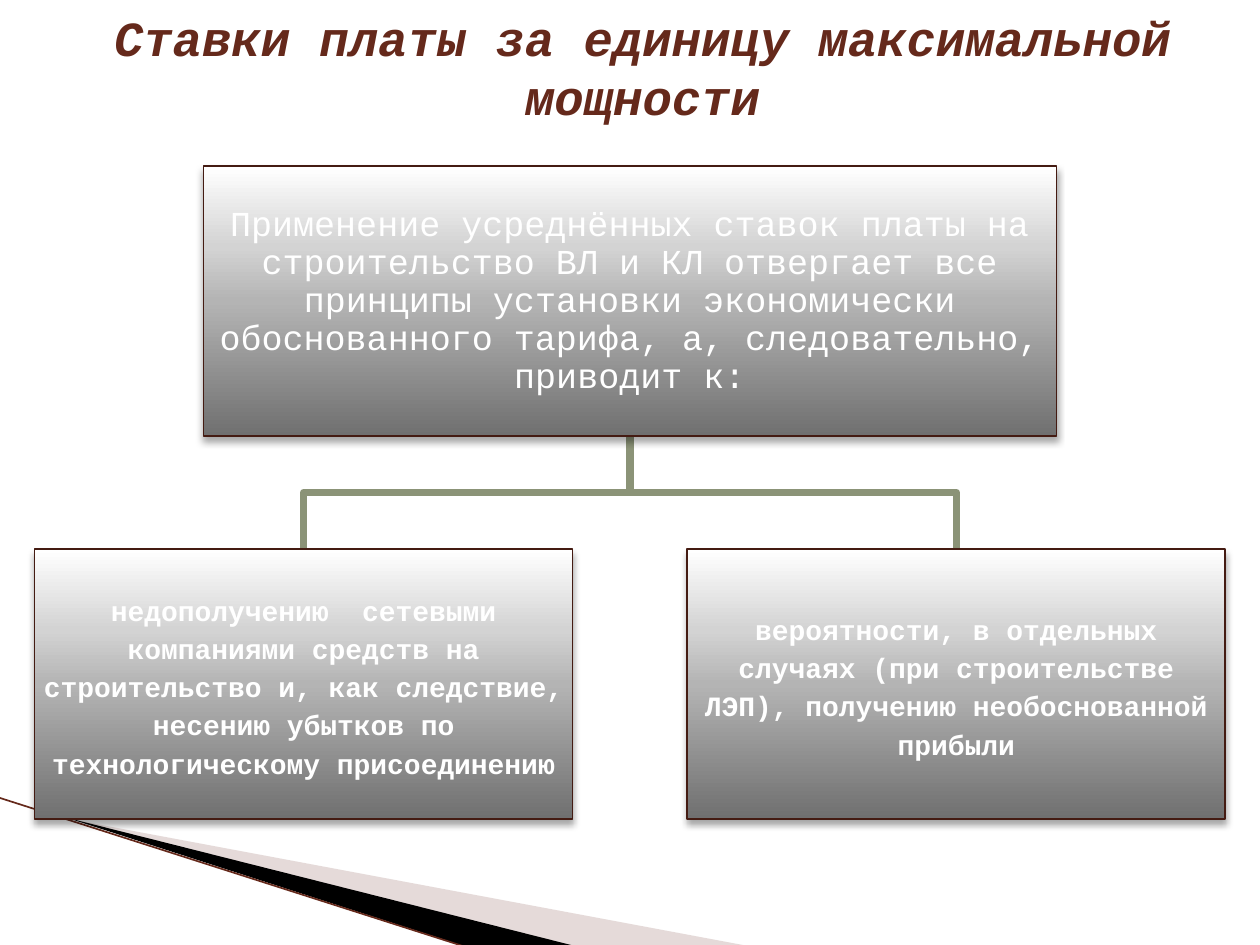
import pptx
import pptx.dml.color
import pptx.enum.shapes
import pptx.enum.text
import pptx.oxml
import pptx.oxml.ns
import pptx.util
from dataclasses import dataclass

Inches = pptx.util.Inches
Pt = pptx.util.Pt
NAMESPACE = pptx.oxml.ns.nsdecls("a")


@dataclass(frozen=True)
class Theme:
    font: str = "Courier New"
    title_size: int = 28
    main_size: int = 20
    result_size: int = 16
    title_color: str = "65291B"
    text_color: str = "FFFFFF"
    box_line: str = "441B12"
    link_color: str = "8B9377"
    link_width: float = 4.33
    wedge_light: str = "BFA4A1"
    wedge_dark: str = "000000"
    gradient: tuple = ((0, "707070"), (50, "B4B4B4"), (70, "D3D3D3"), (100, "FFFFFF"))


def rgb(color):
    return pptx.dml.color.RGBColor.from_string(color)


class SlideBuilder:
    def __init__(self, slide, theme):
        self.slide = slide
        self.theme = theme

    def add_text(self, paragraph, text, size, color, bold=False, italic=False):
        paragraph.alignment = pptx.enum.text.PP_ALIGN.CENTER
        run = paragraph.add_run()
        run.text = text
        run.font.name = self.theme.font
        run.font.size = Pt(size)
        run.font.bold = bold
        run.font.italic = italic
        run.font.color.rgb = rgb(color)

    def title(self, text, left, top, width, height):
        shape = self.slide.shapes.add_textbox(
            Inches(left), Inches(top), Inches(width), Inches(height))
        shape.text_frame.word_wrap = True
        paragraph = shape.text_frame.paragraphs[0]
        paragraph._p.get_or_add_pPr().set("marL", str(Inches(0.2)))
        self.add_text(paragraph, text, self.theme.title_size,
                      self.theme.title_color, bold=True, italic=True)

    def freeform(self, points, close):
        builder = self.slide.shapes.build_freeform(
            *(Inches(value) for value in points[0]))
        builder.add_line_segments(
            [(Inches(x), Inches(y)) for x, y in points[1:]], close=close)
        shape = builder.convert_to_shape()
        shape.shadow.inherit = False
        return shape

    def wedge(self, points, color, opacity=100):
        shape = self.freeform(points, close=True)
        shape.fill.solid()
        shape.fill.fore_color.rgb = rgb(color)
        shape.line.fill.background()
        if opacity < 100:
            color_element = shape._element.spPr.find(
                pptx.oxml.ns.qn("a:solidFill"))[0]
            color_element.append(pptx.oxml.parse_xml(
                f'<a:alpha {NAMESPACE} val="{opacity * 1000}"/>'))

    def link(self, points):
        shape = self.freeform(points, close=False)
        shape.fill.background()
        shape.line.color.rgb = rgb(self.theme.link_color)
        shape.line.width = Pt(self.theme.link_width)
        shape._element.spPr.find(pptx.oxml.ns.qn("a:ln")).append(
            pptx.oxml.parse_xml(f"<a:round {NAMESPACE}/>"))

    def line(self, start, end, color, width):
        connector = self.slide.shapes.add_connector(
            pptx.enum.shapes.MSO_CONNECTOR.STRAIGHT,
            *(Inches(value) for value in start + end))
        connector.line.color.rgb = rgb(color)
        connector.line.width = Pt(width)
        connector._element.spPr.append(
            pptx.oxml.parse_xml(f"<a:effectLst {NAMESPACE}/>"))

    def box(self, text, left, top, width, height, size, spacing, bold=False):
        shape = self.slide.shapes.add_shape(
            pptx.enum.shapes.MSO_SHAPE.RECTANGLE,
            Inches(left), Inches(top), Inches(width), Inches(height))
        shape.shadow.inherit = False
        shape.line.color.rgb = rgb(self.theme.box_line)
        shape.line.width = Pt(1)
        stops = "".join(
            f'<a:gs pos="{position * 1000}"><a:srgbClr val="{color}"/></a:gs>'
            for position, color in self.theme.gradient)
        properties = shape._element.spPr
        properties.find(pptx.oxml.ns.qn("a:prstGeom")).addnext(
            pptx.oxml.parse_xml(
                f'<a:gradFill {NAMESPACE}><a:gsLst>{stops}</a:gsLst>'
                '<a:lin ang="16200000" scaled="0"/></a:gradFill>'))
        properties.find(pptx.oxml.ns.qn("a:effectLst")).append(
            pptx.oxml.parse_xml(
                f'<a:outerShdw {NAMESPACE} blurRad="{Pt(4)}" dist="{Pt(3)}" '
                'dir="5400000" rotWithShape="0"><a:srgbClr val="000000">'
                '<a:alpha val="35000"/></a:srgbClr></a:outerShdw>'))
        frame = shape.text_frame
        frame.word_wrap = True
        frame.vertical_anchor = pptx.enum.text.MSO_ANCHOR.MIDDLE
        frame.margin_left = frame.margin_right = Inches(0.01)
        frame.margin_top = frame.margin_bottom = Inches(0.01)
        paragraph = frame.paragraphs[0]
        paragraph.line_spacing = spacing
        self.add_text(paragraph, text, size, self.theme.text_color, bold)


def main():
    presentation = pptx.Presentation()
    presentation.slide_width = Inches(10)
    presentation.slide_height = Inches(7.5)
    slide = presentation.slides.add_slide(presentation.slide_layouts[6])
    theme = Theme()
    builder = SlideBuilder(slide, theme)

    builder.wedge([(0.55, 6.5), (5.95, 7.51), (4.56, 7.51)],
                  theme.wedge_light, opacity=40)
    builder.wedge([(0.53, 6.49), (4.57, 7.51), (3.72, 7.52)], theme.wedge_dark)
    builder.line((-0.01, 6.33), (3.71, 7.52), theme.title_color, 0.95)

    builder.title("Ставки платы за единицу максимальной мощности", 0, 0.01, 10, 1.58)

    center = 5
    box_height = 2.14
    main_top, main_width = 1.32, 6.77
    result_top, result_width = 4.36, 4.27
    main_bottom = main_top + box_height
    middle = (main_bottom + result_top) / 2
    results = [
        (-2.59, "недополучению  сетевыми компаниями средств на строительство и, "
                "как следствие, несению убытков по технологическому присоединению"),
        (2.59, "вероятности, в отдельных случаях (при строительстве ЛЭП), "
               "получению необоснованной прибыли"),
    ]
    for offset, text in results:
        builder.link([(center, main_bottom), (center, middle),
                      (center + offset, middle), (center + offset, result_top)])

    builder.box(
        "Применение усреднённых ставок платы на строительство ВЛ и КЛ отвергает "
        "все принципы установки экономически обоснованного тарифа, а, "
        "следовательно, приводит к:",
        center - main_width / 2, main_top, main_width, box_height,
        theme.main_size, 0.9)
    for offset, text in results:
        builder.box(text, center + offset - result_width / 2, result_top,
                    result_width, box_height, theme.result_size, 1.14, bold=True)

    presentation.save("out.pptx")


if __name__ == "__main__":
    main()
